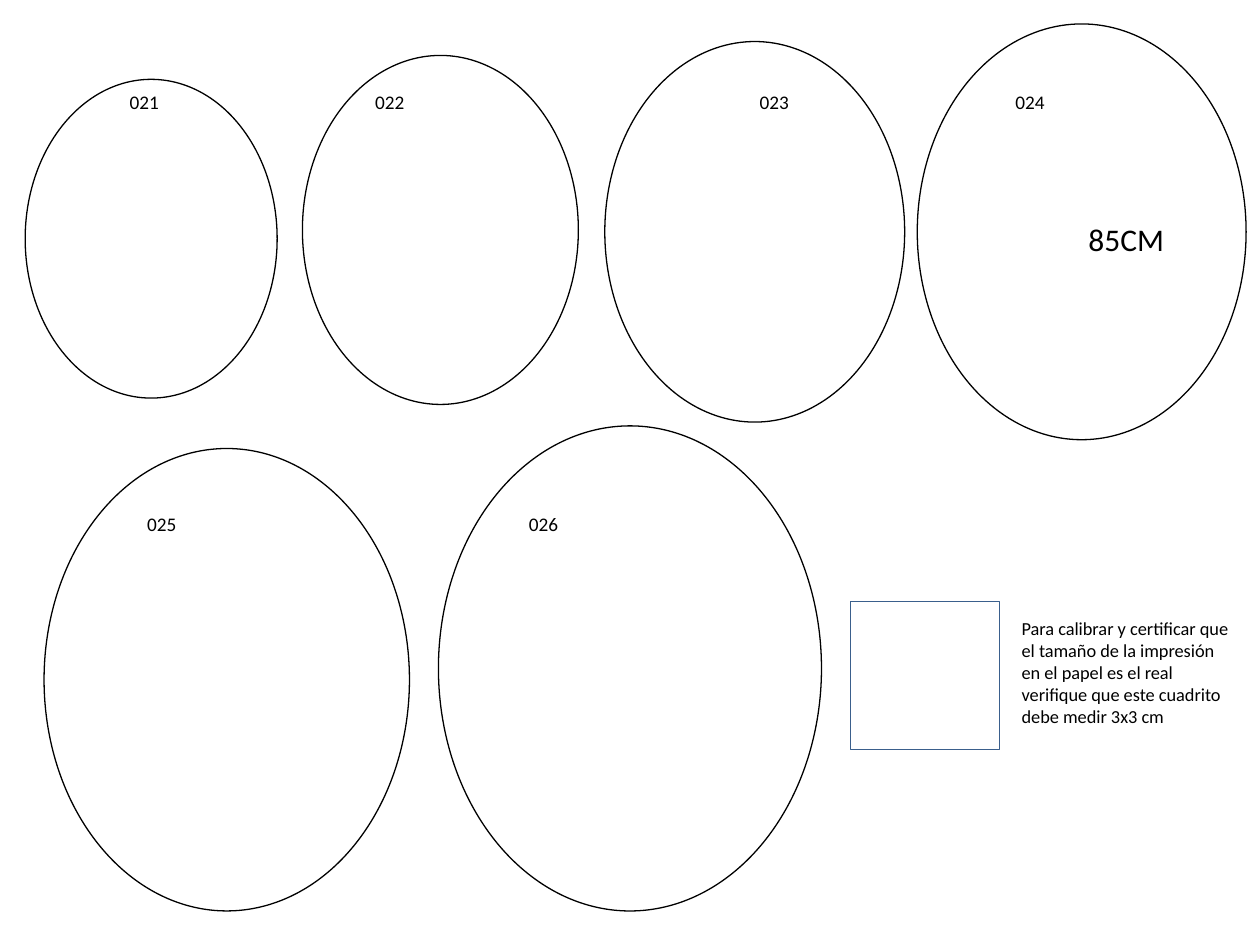
from pptx import Presentation
from pptx.dml.color import RGBColor
from pptx.enum.shapes import MSO_SHAPE
from pptx.enum.text import MSO_AUTO_SIZE
from pptx.util import Inches, Pt

OVAL, RECTANGLE = MSO_SHAPE.OVAL, MSO_SHAPE.RECTANGLE
FIT_SHAPE = MSO_AUTO_SIZE.SHAPE_TO_FIT_TEXT
BLACK = RGBColor(0x00, 0x00, 0x00)
WHITE = RGBColor(0xFF, 0xFF, 0xFF)
BLUE = RGBColor(0x3A, 0x5F, 0x8C)

deck = Presentation()
deck.slide_width, deck.slide_height = Inches(10), Inches(7.5)
page = deck.slides.add_slide(deck.slide_layouts[6])


def add_outline(kind, left, top, width, height, color, weight):
    shape = page.shapes.add_shape(
        kind, Inches(left), Inches(top), Inches(width), Inches(height))
    shape.shadow.inherit = False
    shape.fill.background()
    shape.line.color.rgb = color
    shape.line.width = Pt(weight)
    return shape


def add_text(lines, left, top, width, height, size, wrap=False):
    box = page.shapes.add_textbox(
        Inches(left), Inches(top), Inches(width), Inches(height))
    frame = box.text_frame
    frame.word_wrap = wrap
    frame.auto_size = FIT_SHAPE
    frame.text = "\n".join(lines)
    for para in frame.paragraphs:
        para.font.name = "Calibri"
        para.font.size = Pt(size)
        para.font.color.rgb = BLACK


# Numbered ovals: number, left, top, width, height, label left, label top
ovals = [
    ("021", 0.2, 0.63, 2, 2.53, 0.93, 0.67),
    ("022", 2.4, 0.44, 2.19, 2.77, 2.88, 0.67),
    ("023", 4.8, 0.33, 2.38, 3.02, 5.93, 0.67),
    ("024", 7.28, 0.19, 2.61, 3.3, 7.96, 0.67),
    ("025", 0.35, 3.56, 2.9, 3.67, 1.07, 4.02),
    ("026", 3.48, 3.38, 3.04, 3.85, 4.1, 4.02),
]
for number, left, top, width, height, label_left, label_top in ovals:
    add_outline(OVAL, left, top, width, height, BLACK, 0.75)
    add_text([number], label_left, label_top, 0.43, 0.29, 11)

# Size mark
add_text(["85CM"], 8.54, 1.7, 0.81, 0.4, 18)

# Calibration square (3 x 3 cm) and its instructions
square = add_outline(RECTANGLE, 6.75, 4.77, 1.18, 1.18, BLUE, 0.25)
square.fill.solid()
square.fill.fore_color.rgb = WHITE
add_text(
    ["Para calibrar y certificar que el tamaño de la impresión en el papel "
     "es el real verifique que este cuadrito",
     "debe medir 3x3 cm"],
    8.01, 4.85, 1.89, 0.98, 10.5, wrap=True)

deck.save("out.pptx")
